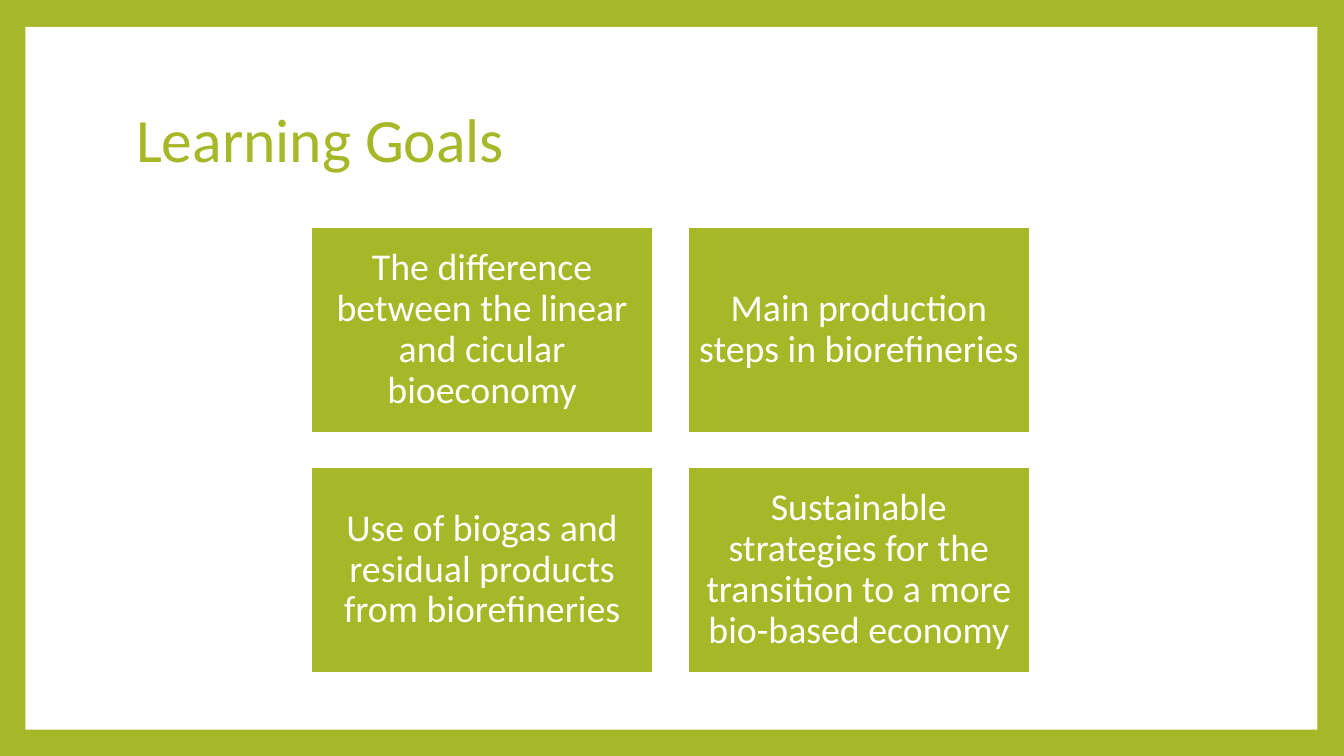
from pptx import Presentation
from pptx.dml.color import RGBColor
from pptx.enum.shapes import MSO_SHAPE as Shape
from pptx.enum.text import MSO_ANCHOR as Anchor, MSO_AUTO_SIZE as AutoSize, PP_ALIGN as Align
from pptx.util import Cm, Pt

COLORS = {"green": "A6B727", "white": "FFFFFF"}
GOALS = [
    "The difference between the linear and cicular bioeconomy",
    "Main production steps in biorefineries",
    "Use of biogas and residual products from biorefineries",
    "Sustainable strategies for the transition to a more bio-based economy",
]


def color(name):
    return RGBColor.from_string(COLORS[name])


def write_text(shape, text, *, size, font_color, align, inset):
    frame = shape.text_frame
    frame.word_wrap = True
    frame.auto_size = AutoSize.NONE
    frame.vertical_anchor = Anchor.MIDDLE
    frame.margin_left = frame.margin_right = Cm(inset[0])
    frame.margin_top = frame.margin_bottom = Cm(inset[1])
    paragraph = frame.paragraphs[0]
    paragraph.alignment = align
    paragraph.line_spacing = 0.9
    run = paragraph.add_run()
    run.text = text
    run.font.name = "Calibri"
    run.font.size = Pt(size)
    run.font.color.rgb = color(font_color)


def add_rectangle(slide, box, fill, line=None):
    shape = slide.shapes.add_shape(Shape.RECTANGLE, *(Cm(length) for length in box))
    shape.shadow.inherit = False
    shape.fill.solid()
    shape.fill.fore_color.rgb = color(fill)
    if line:
        shape.line.color.rgb = color(line)
        shape.line.width = Pt(1.5)
    else:
        shape.line.fill.background()
    return shape


def add_frame(slide, box):
    slide.background.fill.solid()
    slide.background.fill.fore_color.rgb = color("green")
    panel = add_rectangle(slide, box, "white")
    slide.shapes.title.element.addprevious(panel.element)


def add_title(slide, box, text):
    title = slide.shapes.title
    title.left, title.top, title.width, title.height = (Cm(length) for length in box)
    write_text(title, text, size=44, font_color="green", align=Align.LEFT, inset=(0.25, 0.13))


def add_goal_grid(slide, box, goals, columns=2, gap=0.86):
    left, top, width, height = box
    rows = len(goals) // columns
    card_width = (width - gap * (columns - 1)) / columns
    card_height = (height - gap * (rows - 1)) / rows
    for index, goal in enumerate(goals):
        row, column = divmod(index, columns)
        card_left = left + column * (card_width + gap)
        card_top = top + row * (card_height + gap)
        card = add_rectangle(
            slide, (card_left, card_top, card_width, card_height), "green", line="white"
        )
        write_text(card, goal, size=27, font_color="white", align=Align.CENTER, inset=(0.28, 0.28))


def main():
    presentation = Presentation()
    presentation.slide_width = Cm(33.87)
    presentation.slide_height = Cm(19.05)
    slide = presentation.slides.add_slide(presentation.slide_layouts.get_by_name("Title Only"))
    add_frame(slide, (0.64, 0.68, 32.56, 17.71))
    add_title(slide, (3.18, 1.7, 27.43, 3.76), "Learning Goals")
    add_goal_grid(slide, (7.83, 5.72, 18.13, 11.23), GOALS)
    presentation.save("out.pptx")


if __name__ == "__main__":
    main()
